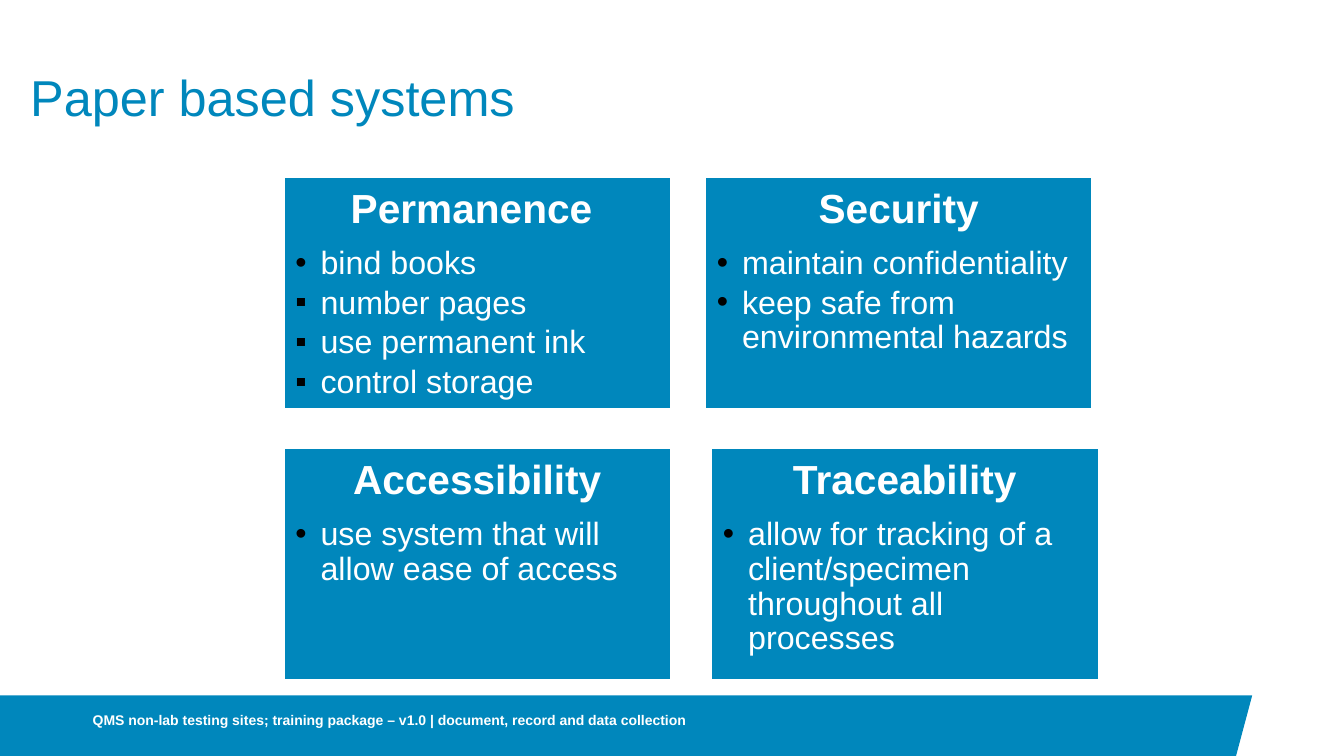
import pptx
import pptx.util
import pptx.dml.color
import pptx.enum.shapes
import pptx.enum.text
import pptx.oxml.ns
import lxml.etree
from dataclasses import dataclass

WIDTH = pptx.util.Inches(13.33)
HEIGHT = pptx.util.Inches(7.5)
FONT = "Arial"
COLOURS = {"blue": "0087BC", "white": "FFFFFF", "bullet": "000000"}
CARD_WIDTH, CARD_HEIGHT = 28.88, 30.8
LEFT_COLUMN = 21.08
TOP_ROW, BOTTOM_ROW = 23.33, 59.2
ROUND, SQUARE = "•", "▪"


@dataclass(frozen=True)
class Item:
    text: str
    bullet: str = ROUND


@dataclass(frozen=True)
class Card:
    left: float
    top: float
    heading: str
    items: tuple[Item, ...]


CARDS = (
    Card(LEFT_COLUMN, TOP_ROW, "Permanence ", (
        Item("bind books"),
        Item("number pages", SQUARE),
        Item("use permanent ink", SQUARE),
        Item("control storage", SQUARE),
    )),
    Card(52.44, TOP_ROW, "Security", (
        Item("maintain confidentiality"),
        Item("keep safe from environmental hazards"),
    )),
    Card(LEFT_COLUMN, BOTTOM_ROW, "Accessibility", (
        Item("use system that will allow ease of access"),
    )),
    Card(52.89, BOTTOM_ROW, "Traceability", (
        Item("allow for tracking of a client/specimen throughout all processes"),
    )),
)


def across(percent: float) -> int:
    return round(WIDTH * percent / 100)


def down(percent: float) -> int:
    return round(HEIGHT * percent / 100)


def colour(name: str) -> pptx.dml.color.RGBColor:
    return pptx.dml.color.RGBColor.from_string(COLOURS[name])


def set_margins(frame, margin: float) -> None:
    length = pptx.util.Inches(margin)
    frame.margin_left = frame.margin_right = length
    frame.margin_top = frame.margin_bottom = length
    frame.word_wrap = True
    frame.auto_size = pptx.enum.text.MSO_AUTO_SIZE.NONE


def write(para, text: str, size: float, tint: str, bold: bool = False) -> None:
    para.text = text
    for span in para.runs:
        span.font.name = FONT
        span.font.size = pptx.util.Pt(size)
        span.font.bold = bold
        span.font.color.rgb = colour(tint)


def add_bullet(para, symbol: str) -> None:
    indent = pptx.util.Inches(0.25)
    properties = para._p.get_or_add_pPr()
    properties.set("marL", str(indent))
    properties.set("indent", str(-indent))
    qn = pptx.oxml.ns.qn
    tint = lxml.etree.SubElement(properties, qn("a:buClr"))
    lxml.etree.SubElement(tint, qn("a:srgbClr"), val=COLOURS["bullet"])
    lxml.etree.SubElement(properties, qn("a:buFont"), typeface=FONT)
    lxml.etree.SubElement(properties, qn("a:buChar"), char=symbol)


def add_band(page) -> None:
    builder = page.shapes.build_freeform(0, down(92))
    builder.add_line_segments(
        [(across(93.17), down(92)), (across(91.97), HEIGHT), (0, HEIGHT)]
    )
    band = builder.convert_to_shape()
    band.shadow.inherit = False
    band.fill.solid()
    band.fill.fore_color.rgb = colour("blue")
    band.line.fill.background()


def add_title(page) -> None:
    title = page.shapes.title
    title.left, title.top = across(2.25), down(3.07)
    title.width, title.height = across(86.27), down(13.73)
    frame = title.text_frame
    set_margins(frame, 0)
    frame.vertical_anchor = pptx.enum.text.MSO_ANCHOR.BOTTOM
    para = frame.paragraphs[0]
    write(para, "Paper based systems", 36, "blue")
    para.alignment = pptx.enum.text.PP_ALIGN.LEFT
    para.line_spacing = 0.9


def add_footer(page) -> None:
    box = page.shapes.add_textbox(across(6.9), down(92.67), across(60), down(7.33))
    frame = box.text_frame
    set_margins(frame, 0)
    frame.margin_bottom = pptx.util.Inches(0.17)
    frame.vertical_anchor = pptx.enum.text.MSO_ANCHOR.MIDDLE
    write(
        frame.paragraphs[0],
        "QMS non-lab testing sites; training package – v1.0 | document, record and data collection",
        10, "white", True,
    )


def add_card(page, card: Card) -> None:
    box = page.shapes.add_shape(
        pptx.enum.shapes.MSO_SHAPE.RECTANGLE,
        across(card.left), down(card.top), across(CARD_WIDTH), down(CARD_HEIGHT),
    )
    box.shadow.inherit = False
    box.fill.solid()
    box.fill.fore_color.rgb = colour("blue")
    box.line.color.rgb = colour("white")
    box.line.width = pptx.util.Pt(2)
    frame = box.text_frame
    set_margins(frame, 0.12)
    frame.vertical_anchor = pptx.enum.text.MSO_ANCHOR.TOP
    heading = frame.paragraphs[0]
    write(heading, card.heading, 29, "white", True)
    heading.alignment = pptx.enum.text.PP_ALIGN.CENTER
    heading.line_spacing = 0.9
    for index, item in enumerate(card.items):
        para = frame.add_paragraph()
        write(para, item.text, 23, "white")
        para.level = 1
        para.alignment = pptx.enum.text.PP_ALIGN.LEFT
        para.line_spacing = 0.9
        para.space_before = pptx.util.Pt(3.5 if index else 10.2)
        add_bullet(para, item.bullet)


def main() -> None:
    deck = pptx.Presentation()
    deck.slide_width, deck.slide_height = WIDTH, HEIGHT
    page = deck.slides.add_slide(deck.slide_layouts.get_by_name("Title Only"))
    add_band(page)
    add_title(page)
    add_footer(page)
    for card in CARDS:
        add_card(page, card)
    deck.save("out.pptx")


if __name__ == "__main__":
    main()
